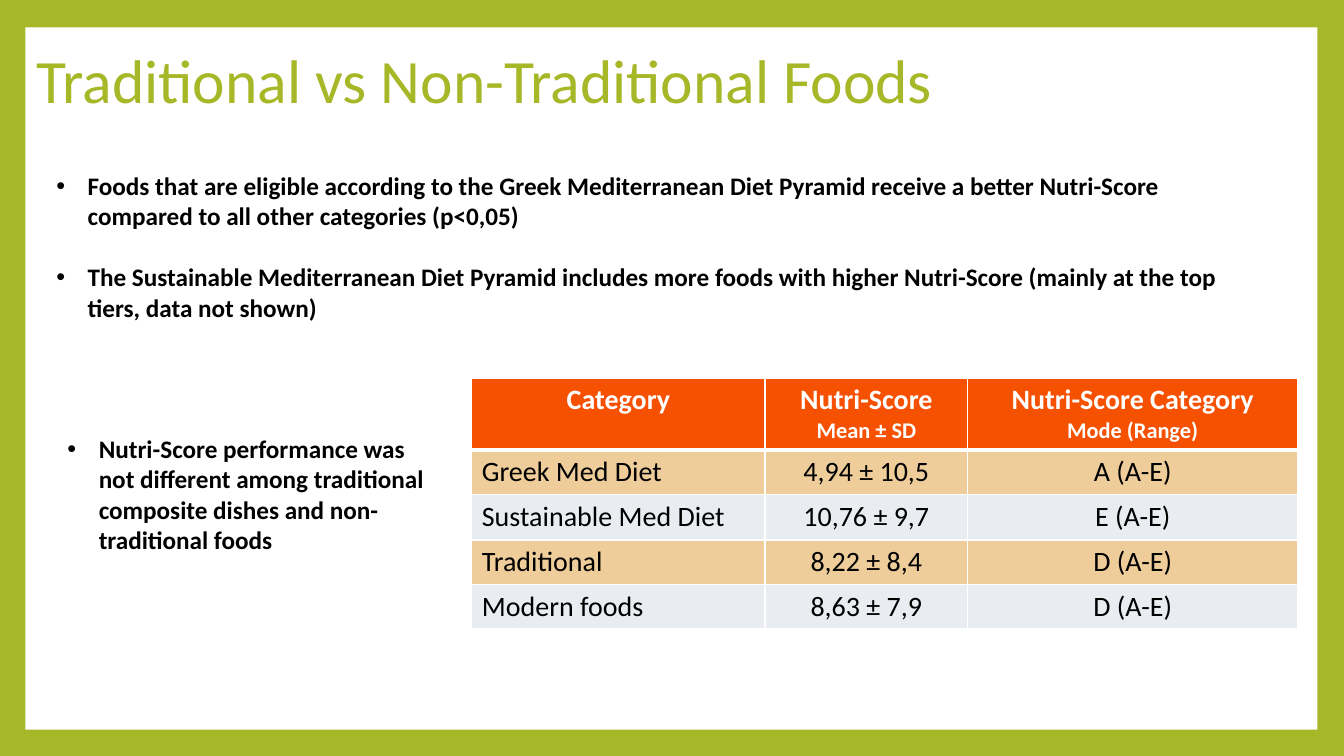
from dataclasses import dataclass

from lxml import etree
from pptx import Presentation
from pptx.dml.color import RGBColor
from pptx.enum.shapes import MSO_SHAPE
from pptx.enum.text import MSO_ANCHOR, MSO_AUTO_SIZE, PP_ALIGN
from pptx.oxml.ns import qn
from pptx.util import Cm, Pt

RECTANGLE = MSO_SHAPE.RECTANGLE
MIDDLE = MSO_ANCHOR.MIDDLE
NO_AUTOFIT = MSO_AUTO_SIZE.NONE
GROW = MSO_AUTO_SIZE.SHAPE_TO_FIT_TEXT
LEFT, CENTER = PP_ALIGN.LEFT, PP_ALIGN.CENTER
TITLE_ONLY = 5


@dataclass(frozen=True)
class Theme:
    font: str = "Calibri"
    green: str = "A6B727"
    white: str = "FFFFFF"
    black: str = "000000"
    header: str = "F65100"
    bands: tuple = ("EECD9B", "E9EDF2")
    title_size: int = 44
    table_size: int = 20
    bullet_size: int = 18
    subhead_size: int = 16


class SlideBuilder:
    def __init__(self, presentation, theme):
        self.theme = theme
        self.slide = presentation.slides.add_slide(presentation.slide_layouts[TITLE_ONLY])

    def background(self, color):
        fill = self.slide.background.fill
        fill.solid()
        fill.fore_color.rgb = RGBColor.from_string(color)

    def panel(self, left, top, width, height, color):
        shape = self.slide.shapes.add_shape(RECTANGLE, Cm(left), Cm(top), Cm(width), Cm(height))
        shape.shadow.inherit = False
        shape.fill.solid()
        shape.fill.fore_color.rgb = RGBColor.from_string(color)
        shape.line.fill.background()
        # Send behind the title placeholder
        self.slide.shapes._spTree.insert(2, shape._element)

    def run(self, paragraph, text, size, color, bold=False):
        run = paragraph.add_run()
        run.text = text
        run.font.name = self.theme.font
        run.font.size = Pt(size)
        run.font.bold = bold
        run.font.color.rgb = RGBColor.from_string(color)

    def title(self, text, left, top, width, height):
        shape = self.slide.shapes.title
        shape.left, shape.top, shape.width, shape.height = map(Cm, (left, top, width, height))
        frame = shape.text_frame
        frame.auto_size = NO_AUTOFIT
        frame.vertical_anchor = MIDDLE
        paragraph = frame.paragraphs[0]
        paragraph.alignment = LEFT
        paragraph.line_spacing = 0.9
        self.run(paragraph, text, self.theme.title_size, self.theme.green)

    def bullets(self, texts, left, top, width, height):
        shape = self.slide.shapes.add_textbox(Cm(left), Cm(top), Cm(width), Cm(height))
        frame = shape.text_frame
        frame.word_wrap = True
        frame.auto_size = GROW
        for index, text in enumerate(texts):
            paragraph = frame.add_paragraph() if index else frame.paragraphs[0]
            paragraph.space_before = Pt(22 if index else 0)
            properties = paragraph._p.get_or_add_pPr()
            properties.set("marL", str(Cm(0.79)))
            properties.set("indent", str(Cm(-0.79)))
            etree.SubElement(properties, qn("a:buFont"), typeface="Arial")
            etree.SubElement(properties, qn("a:buChar"), char="•")
            self.run(paragraph, text, self.theme.bullet_size, self.theme.black, bold=True)

    def cell_borders(self, cell, widths):
        properties = cell._tc.get_or_add_tcPr()
        for index, (side, width) in enumerate(widths.items()):
            line = etree.Element(qn(f"a:ln{side}"), w=str(Pt(width)))
            fill = etree.SubElement(line, qn("a:solidFill"))
            etree.SubElement(fill, qn("a:srgbClr"), val=self.theme.white)
            properties.insert(index, line)

    def table(self, header, rows, left, top, column_widths, row_heights):
        theme = self.theme
        table = self.slide.shapes.add_table(
            len(row_heights), len(column_widths), Cm(left), Cm(top),
            Cm(sum(column_widths)), Cm(sum(row_heights))).table
        for column, width in zip(table.columns, column_widths):
            column.width = Cm(width)
        for row, height in zip(table.rows, row_heights):
            row.height = Cm(height)

        for row_index, row in enumerate([header, *rows]):
            is_header = row_index == 0
            fill_color = theme.header if is_header else theme.bands[(row_index - 1) % 2]
            text_color = theme.white if is_header else theme.black
            for column_index, lines in enumerate(row):
                cell = table.cell(row_index, column_index)
                cell.fill.solid()
                cell.fill.fore_color.rgb = RGBColor.from_string(fill_color)
                self.cell_borders(cell, {"L": 1, "R": 1, "T": 3 if row_index == 1 else 1,
                                         "B": 3 if is_header else 1})
                for line_index, text in enumerate(lines.split("\n")):
                    frame = cell.text_frame
                    paragraph = frame.add_paragraph() if line_index else frame.paragraphs[0]
                    paragraph.alignment = CENTER if is_header or column_index else LEFT
                    size = theme.subhead_size if line_index else theme.table_size
                    self.run(paragraph, text, size, text_color, bold=is_header)


def main():
    presentation = Presentation()
    presentation.slide_width, presentation.slide_height = Cm(33.87), Cm(19.05)
    theme = Theme()
    builder = SlideBuilder(presentation, theme)

    # Green frame, white panel and title
    builder.background(theme.green)
    builder.panel(0.64, 0.69, 32.56, 17.7, theme.white)
    builder.title("Traditional vs Non-Traditional Foods", 0.66, 0.23, 27.43, 3.76)

    # Nutri-Score table
    builder.table(
        ["Category", "Nutri-Score\nMean ± SD", "Nutri-Score Category\nMode (Range)"],
        [
            ["Greek Med Diet", "4,94 ± 10,5", "A (A-E)"],
            ["Sustainable Med Diet", "10,76 ± 9,7", "E (A-E)"],
            ["Traditional", "8,22 ± 8,4", "D (A-E)"],
            ["Modern foods", "8,63 ± 7,9", "D (A-E)"],
        ],
        11.89, 9.53, [7.39, 5.11, 8.31], [1.77, 1.1, 1.15, 1.1, 1.1])

    # Findings
    builder.bullets(
        ["Foods that are eligible according to the Greek Mediterranean Diet Pyramid receive "
         "a better Nutri-Score compared to all other categories (p<0,05)",
         "The Sustainable Mediterranean Diet Pyramid includes more foods with higher "
         "Nutri-Score (mainly at the top tiers, data not shown)"],
        1.17, 4.17, 30.96, 4.11)
    builder.bullets(
        ["Nutri-Score performance was not different among traditional composite dishes "
         "and non-traditional foods"],
        1.45, 10.8, 9.86, 3.33)

    presentation.save("out.pptx")


if __name__ == "__main__":
    main()
